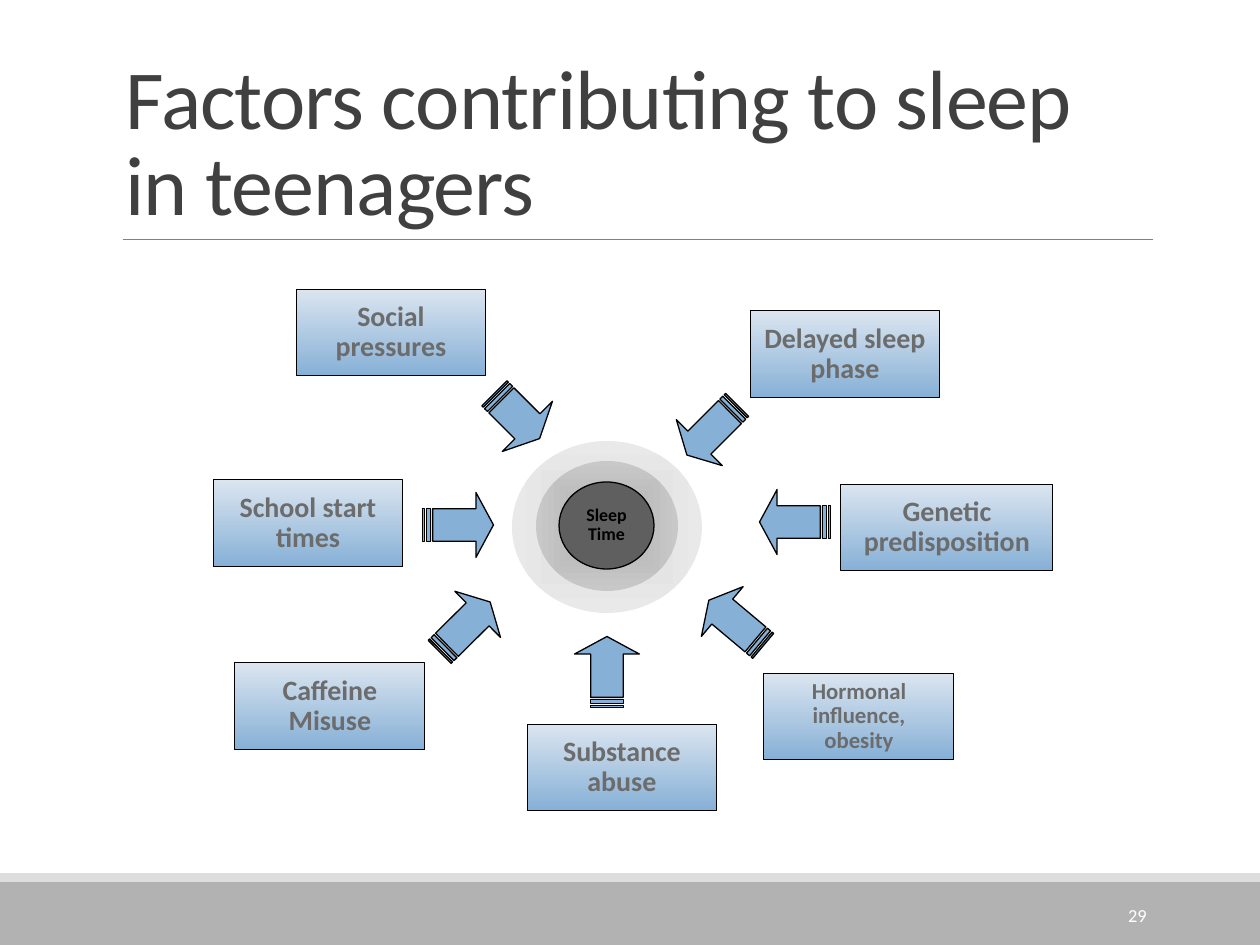
from lxml.etree import SubElement
from pptx import Presentation
from pptx.dml.color import RGBColor
from pptx.enum.shapes import MSO_CONNECTOR, MSO_SHAPE
from pptx.enum.text import MSO_ANCHOR, MSO_AUTO_SIZE, PP_ALIGN
from pptx.oxml import parse_xml
from pptx.oxml.ns import nsdecls, qn
from pptx.util import Emu, Pt

SCALE = 914400 / 126  # EMU in one px
FONT = "Calibri"
HEX = {
    "band": "B2B2B2", "strip": "DDDDDD", "rule": "808080", "title": "404040",
    "pale": "DBE5F0", "blue": "86B0D6", "label": "6C6C6C", "core": "5F5F5F",
    "halo": "E9E9E9", "ring": "C8C8C8", "black": "000000", "white": "FFFFFF",
}
BOX_W, BOX_H = 190, 87

# Factor boxes: text, left, top, width, text size
BOXES = [
    ("School start times", 213, 480, BOX_W, 16),
    ("Social pressures", 296, 289, BOX_W, 16),
    ("Substance abuse", 527, 724, BOX_W, 16),
    ("Hormonal influence, obesity", 764, 673, BOX_W, 13),
    ("Genetic predisposition", 841, 484, 212, 16),
    ("Delayed sleep phase", 750, 311, BOX_W, 16),
    ("Caffeine Misuse", 235, 663, BOX_W, 16),
]

# Arrows: middle x, middle y, length, breadth, rotation
ARROWS = [
    (458, 525, 71, 65, 0),
    (517, 416, 64, 71, 45),
    (465, 627, 71, 65, 315.3),
    (712, 430, 71, 65, 135),
    (795, 522, 71, 65, 180),
    (736, 623, 71, 65, 220),
    (607, 672, 71, 65, 270),
]


def px(*vals):
    return [Emu(round(v * SCALE)) for v in vals]


def rgb(name):
    return RGBColor.from_string(HEX[name])


def write(shape, text, size=16, color="black", bold=False, align=PP_ALIGN.CENTER,
          anchor=MSO_ANCHOR.MIDDLE, lead=0.9, track=0, inset=None):
    frame = shape.text_frame
    frame.word_wrap = True
    frame.auto_size = MSO_AUTO_SIZE.NONE
    frame.vertical_anchor = anchor
    if inset is not None:
        frame.margin_left = frame.margin_right = Pt(inset)
        frame.margin_top = frame.margin_bottom = Pt(inset)
    para = frame.paragraphs[0]
    para.alignment, para.line_spacing = align, lead
    run = para.add_run()
    run.text = text
    font = run.font
    font.name, font.size, font.bold = FONT, Pt(size), bold
    font.color.rgb = rgb(color)
    if track:
        run._r.get_or_add_rPr().set("spc", str(round(track * 100)))


def draw(slide, kind, box, fill, line=None):
    """Add a preset shape; a pair of fills makes a gradient."""
    shape = slide.shapes.add_shape(kind, *px(*box))
    shape.shadow.inherit = False
    if isinstance(fill, tuple):
        shape.fill.gradient()
        shape.fill.gradient_angle = 270
        for stop, name in zip(shape.fill.gradient_stops, fill):
            stop.color.rgb = rgb(name)
    else:
        shape.fill.solid()
        shape.fill.fore_color.rgb = rgb(fill)
    if line:
        shape.line.color.rgb = rgb("black")
        shape.line.width = Pt(line)
    else:
        shape.line.fill.background()
    return shape


def ring(slide, box, fill):
    """Add an ellipse whose gradient runs out from its middle."""
    shape = draw(slide, MSO_SHAPE.OVAL, box, fill)
    lin = shape._element.spPr.find(qn("a:gradFill")).find(qn("a:lin"))
    lin.getparent().replace(lin, parse_xml(
        f'<a:path {nsdecls("a")} path="shape">'
        '<a:fillToRect l="50000" t="50000" r="50000" b="50000"/></a:path>'))


def arrow(slide, mid, down, long, broad, turn):
    box = (mid - long / 2, down - broad / 2, long, broad)
    shape = draw(slide, MSO_SHAPE.STRIPED_RIGHT_ARROW, box, "blue", 0.75)
    shape.adjustments[0], shape.adjustments[1] = 0.5, 0.27
    shape.rotation = turn


def rule(slide, left, right, top):
    line = slide.shapes.add_connector(
        MSO_CONNECTOR.STRAIGHT, *px(left, top, right, top))
    line.line.color.rgb = rgb("rule")
    line.line.width = Pt(0.5)
    SubElement(line._element.spPr, qn("a:effectLst"))


def main():
    deck = Presentation()
    deck.slide_width, deck.slide_height = px(1260, 945)
    slide = deck.slides.add_slide(deck.slide_layouts[5])

    # Footer bands and title rule
    draw(slide, MSO_SHAPE.RECTANGLE, (0, 882, 1260, 63), "band")
    draw(slide, MSO_SHAPE.RECTANGLE, (0, 873, 1260, 9), "strip")
    rule(slide, 123, 1153, 239)

    # Title
    title = slide.shapes.title
    title.left, title.top, title.width, title.height = px(113, 39, 1040, 200)
    write(title, "Factors contributing to sleep in teenagers", size=48,
          color="title", align=PP_ALIGN.LEFT, anchor=MSO_ANCHOR.BOTTOM,
          lead=0.85, track=-0.5)

    # Target in the middle
    ring(slide, (512, 441, 190, 172), ("strip", "halo"))
    ring(slide, (536, 461, 142, 130), ("band", "ring"))
    core = draw(slide, MSO_SHAPE.OVAL, (559, 482, 95, 87), "core", 0.75)
    write(core, "Sleep Time", size=10.2, bold=True, inset=0)

    # Factors and the arrows that point inwards
    for text, left, top, width, size in BOXES:
        box = draw(slide, MSO_SHAPE.RECTANGLE, (left, top, width, BOX_H),
                   ("pale", "blue"), 0.5)
        write(box, text, size=size, color="label", bold=True)
    for item in ARROWS:
        arrow(slide, *item)

    # Slide number
    num = slide.shapes.add_textbox(*px(1023, 890, 136, 50))
    write(num, "29", size=10.5, color="white", align=PP_ALIGN.RIGHT, lead=1.0)

    deck.save("out.pptx")


if __name__ == "__main__":
    main()
